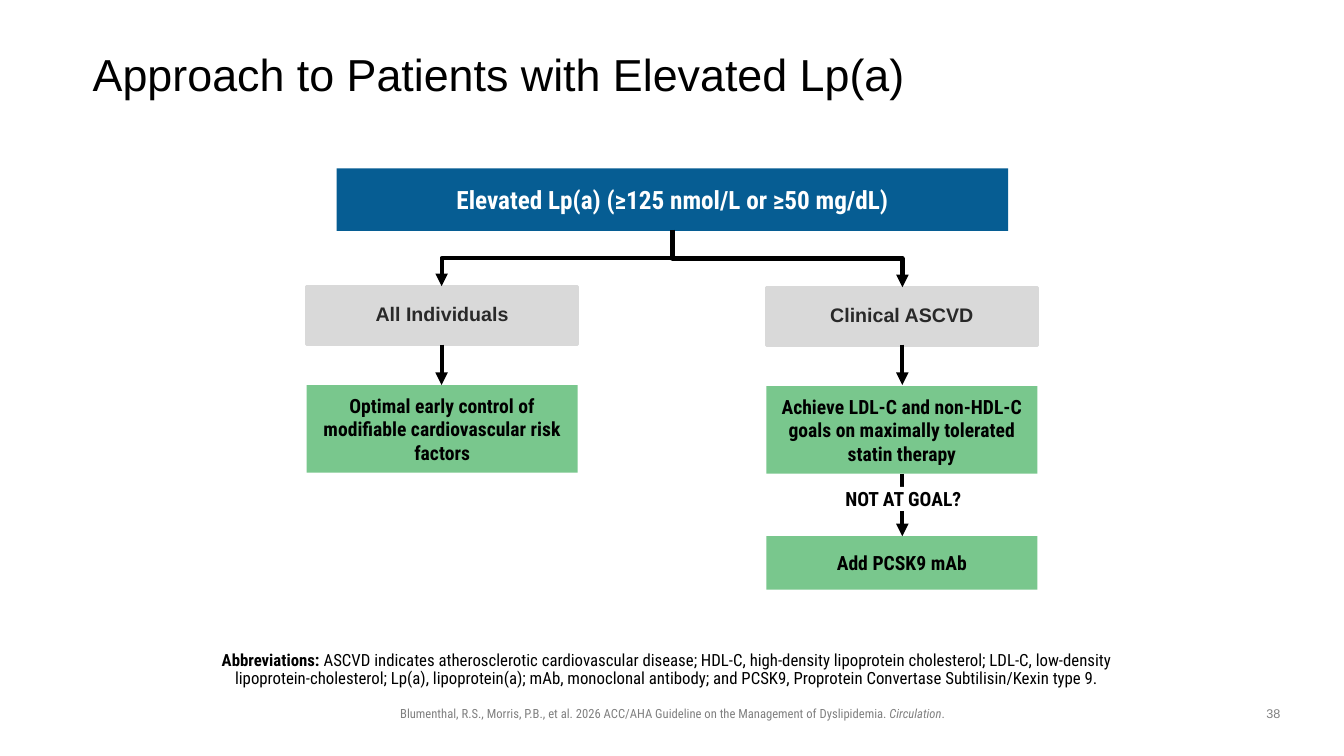
from lxml import etree
from pptx import Presentation
from pptx.dml.color import RGBColor
from pptx.enum import shapes, text
from pptx.oxml import ns
from pptx.util import Inches, Pt

BLACK = RGBColor(0x00, 0x00, 0x00)
WHITE = RGBColor(0xFF, 0xFF, 0xFF)
BLUE = RGBColor(0x06, 0x5D, 0x93)
GREEN = RGBColor(0x79, 0xC7, 0x8D)
LIGHT_GRAY = RGBColor(0xD9, 0xD9, 0xD9)
MID_GRAY = RGBColor(0x80, 0x80, 0x80)
CHARCOAL = RGBColor(0x29, 0x29, 0x29)
CONDENSED = "Roboto Condensed"
CENTER = text.PP_ALIGN.CENTER
MIDDLE = text.MSO_ANCHOR.MIDDLE
BOX_WIDTH = 2.69


def write(shape, runs, size, font=CONDENSED, color=BLACK, bold=None, align=CENTER,
          anchor=MIDDLE, insets=(0, 0, 0, 0), spacing=None):
    """Fill a shape with one paragraph and return its runs."""
    frame = shape.text_frame
    frame.word_wrap = True
    frame.vertical_anchor = anchor
    (frame.margin_left, frame.margin_top,
     frame.margin_right, frame.margin_bottom) = map(Inches, insets)
    paragraph = frame.paragraphs[0]
    paragraph.alignment = align
    if spacing:
        paragraph.line_spacing = spacing
    for words in runs:
        paragraph.add_run().text = words
    paragraph.font.name = font
    paragraph.font.size = Pt(size)
    paragraph.font.color.rgb = color
    paragraph.font.bold = bold
    return paragraph.runs


def add_text(slide, place, runs, size, **style):
    shape = slide.shapes.add_textbox(*map(Inches, place))
    return write(shape, runs, size, **style)


def add_box(slide, place, words, fill, size=14, border=None, **style):
    shape = slide.shapes.add_shape(shapes.MSO_SHAPE.RECTANGLE, *map(Inches, place))
    shape.shadow.inherit = False
    shape.fill.solid()
    shape.fill.fore_color.rgb = fill
    if border:
        shape.line.color.rgb = border
        shape.line.width = Pt(2)
    else:
        shape.line.fill.background()
    write(shape, [words], size, bold=True, **style)


def add_arrow(slide, x1, y1, x2, y2, kind=shapes.MSO_CONNECTOR.STRAIGHT):
    connector = slide.shapes.add_connector(kind, *map(Inches, (x1, y1, x2, y2)))
    connector.line.color.rgb = BLACK
    connector.line.width = Pt(3)
    etree.SubElement(connector.line._get_or_add_ln(), ns.qn("a:tailEnd"), type="triangle")
    etree.SubElement(connector._element.spPr, ns.qn("a:effectLst"))
    return connector


def add_branch(slide, x1, y1, x2, y2):
    """Elbow arrow that goes down, across and down: a turned horizontal elbow."""
    middle_x, middle_y = (x1 + x2) / 2, (y1 + y2) / 2
    half_width, half_height = (y2 - y1) / 2, abs(x2 - x1) / 2
    turn = 90
    if x2 > x1:
        half_width, turn = -half_width, 270
    connector = add_arrow(slide, middle_x - half_width, middle_y - half_height,
                          middle_x + half_width, middle_y + half_height,
                          shapes.MSO_CONNECTOR.ELBOW)
    connector._element.spPr.find(ns.qn("a:xfrm")).set("rot", str(turn * 60000))


def main():
    presentation = Presentation()
    presentation.slide_width = Inches(13.33)
    presentation.slide_height = Inches(7.5)
    slide = presentation.slides.add_slide(presentation.slide_layouts[6])

    # Title
    add_text(slide, (0.92, 0.4, 11.5, 0.72), ["Approach to Patients with Elevated Lp(a)"],
             32, font="Arial", align=text.PP_ALIGN.LEFT, spacing=0.9)

    # Starting box and the two groups of patients
    add_box(slide, (3.34, 1.67, 6.66, 0.62), "Elevated Lp(a) (≥125 nmol/L or ≥50 mg/dL)",
            BLUE, size=18, color=WHITE)
    branches = [
        (3.04, 2.84, 4.38, "All Individuals",
         "Optimal early control of modifiable cardiovascular risk factors"),
        (7.6, 2.85, 8.95, "Clinical ASCVD",
         "Achieve LDL-C and non-HDL-C goals on maximally tolerated statin therapy"),
    ]
    for left, top, center, group, action in branches:
        add_box(slide, (left, top, BOX_WIDTH, 0.58), group, LIGHT_GRAY, border=LIGHT_GRAY,
                font="Arial", color=CHARCOAL, spacing=0.9)
        add_box(slide, (left, top + 0.98, BOX_WIDTH, 0.87), action, GREEN)
        add_branch(slide, 6.67, 2.28, center, top)
        add_arrow(slide, center, 3.42, center, 3.82)

    # Next step when the goal is missed
    add_box(slide, (7.6, 5.32, BOX_WIDTH, 0.53), "Add PCSK9 mAb", GREEN)
    add_arrow(slide, 8.95, 4.7, 8.95, 5.32)
    add_box(slide, (8.31, 4.83, 1.3, 0.24), "NOT AT GOAL?", WHITE,
            anchor=text.MSO_ANCHOR.TOP)

    # Abbreviations
    abbreviations = add_text(
        slide, (1.88, 6.42, 9.57, 0.46),
        ["Abbreviations:",
         " ASCVD indicates atherosclerotic cardiovascular disease; HDL-C, high-density "
         "lipoprotein cholesterol; LDL-C, low-density lipoprotein-cholesterol; Lp(a), "
         "lipoprotein(a); mAb, monoclonal antibody; and PCSK9, Proprotein Convertase "
         "Subtilisin/Kexin type 9."],
        12, anchor=text.MSO_ANCHOR.BOTTOM, insets=(0, 0.05, 0.1, 0.05), spacing=0.9)
    abbreviations[0].font.bold = True

    # Citation and page number
    footer = dict(color=MID_GRAY, anchor=text.MSO_ANCHOR.TOP, insets=(0.1, 0.05, 0.1, 0.05))
    citation = add_text(
        slide, (2.36, 6.95, 8.62, 0.25),
        ["Blumenthal, R.S., Morris, P.B., et al. 2026 ACC/AHA Guideline on the "
         "Management of Dyslipidemia. ", "Circulation", "."], 9, **footer)
    citation[1].font.italic = True
    add_text(slide, (12.42, 6.95, 0.42, 0.26), ["38"], 9, font="Arial", **footer)

    presentation.save("out.pptx")


if __name__ == "__main__":
    main()
